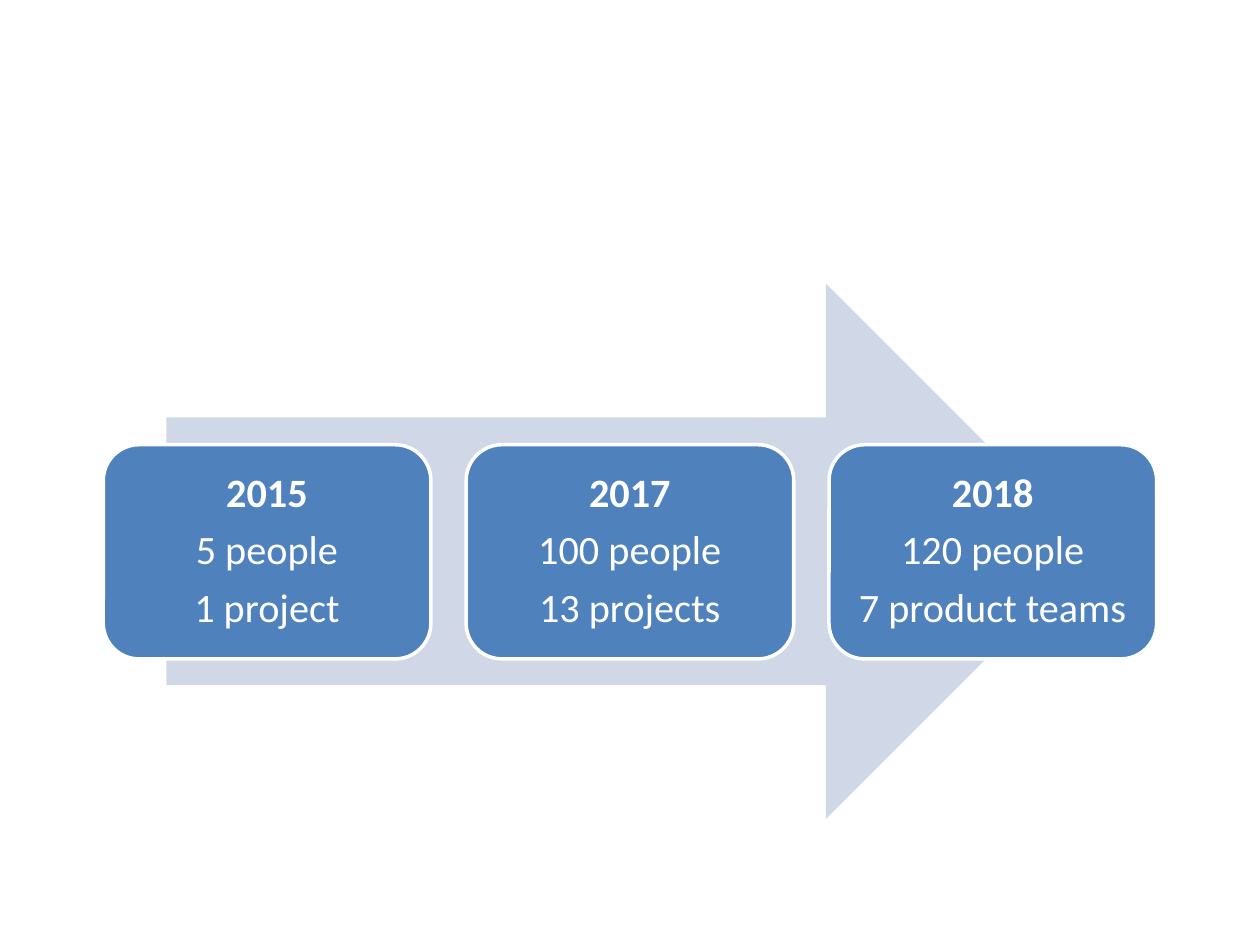
from pptx import Presentation
from pptx.dml.color import RGBColor
from pptx.enum.shapes import MSO_SHAPE
from pptx.enum.text import MSO_ANCHOR, PP_ALIGN
from pptx.util import Inches, Pt

COLORS = {"arrow": "D0D8E8", "card": "4F81BD", "white": "FFFFFF"}
MILESTONES = [
    ("2015", "5 people", "1 project"),
    ("2017", "100 people", "13 projects"),
    ("2018", "120 people", "7 product teams"),
]
CARD_LEFT, CARD_TOP, CARD_WIDTH, CARD_HEIGHT = 0.82, 3.53, 2.6, 1.7
CARD_STEP = 2.88


class TimelineSlide:
    """Holds the text style and the slide that is being filled."""

    font_name = "Calibri"
    font_size = Pt(23)

    def __init__(self, slide):
        self.slide = slide

    def add_filled_shape(self, kind, left, top, width, height, color):
        shape = self.slide.shapes.add_shape(
            kind, Inches(left), Inches(top), Inches(width), Inches(height))
        shape.shadow.inherit = False
        shape.fill.solid()
        shape.fill.fore_color.rgb = RGBColor.from_string(COLORS[color])
        shape.line.fill.background()
        return shape

    def add_arrow(self, left, top, width, height):
        self.add_filled_shape(MSO_SHAPE.RIGHT_ARROW, left, top, width, height, "arrow")

    def add_card(self, left, top, width, height, lines):
        """Add a rounded card whose first line is bold."""
        card = self.add_filled_shape(
            MSO_SHAPE.ROUNDED_RECTANGLE, left, top, width, height, "card")
        card.line.color.rgb = RGBColor.from_string(COLORS["white"])
        card.line.width = Pt(2)

        frame = card.text_frame
        frame.word_wrap = True
        frame.vertical_anchor = MSO_ANCHOR.MIDDLE
        frame.margin_left = frame.margin_right = Inches(0.1)
        frame.margin_top = frame.margin_bottom = Inches(0.1)
        for index, line in enumerate(lines):
            paragraph = frame.add_paragraph() if index else frame.paragraphs[0]
            paragraph.alignment = PP_ALIGN.CENTER
            paragraph.line_spacing = 0.9
            paragraph.space_after = Pt(8)
            self.add_run(paragraph, line, bold=index == 0)

    def add_run(self, paragraph, text, bold):
        run = paragraph.add_run()
        run.text = text
        run.font.name = self.font_name
        run.font.size = self.font_size
        run.font.bold = bold
        run.font.color.rgb = RGBColor.from_string(COLORS["white"])


def main():
    presentation = Presentation()
    presentation.slide_width = Inches(10)
    presentation.slide_height = Inches(7.5)
    blank_layout = presentation.slide_layouts[6]
    timeline = TimelineSlide(presentation.slides.add_slide(blank_layout))

    timeline.add_arrow(1.32, 2.25, 7.36, 4.25)
    for index, lines in enumerate(MILESTONES):
        left = CARD_LEFT + index * CARD_STEP
        timeline.add_card(left, CARD_TOP, CARD_WIDTH, CARD_HEIGHT, lines)

    presentation.save("out.pptx")


if __name__ == "__main__":
    main()
